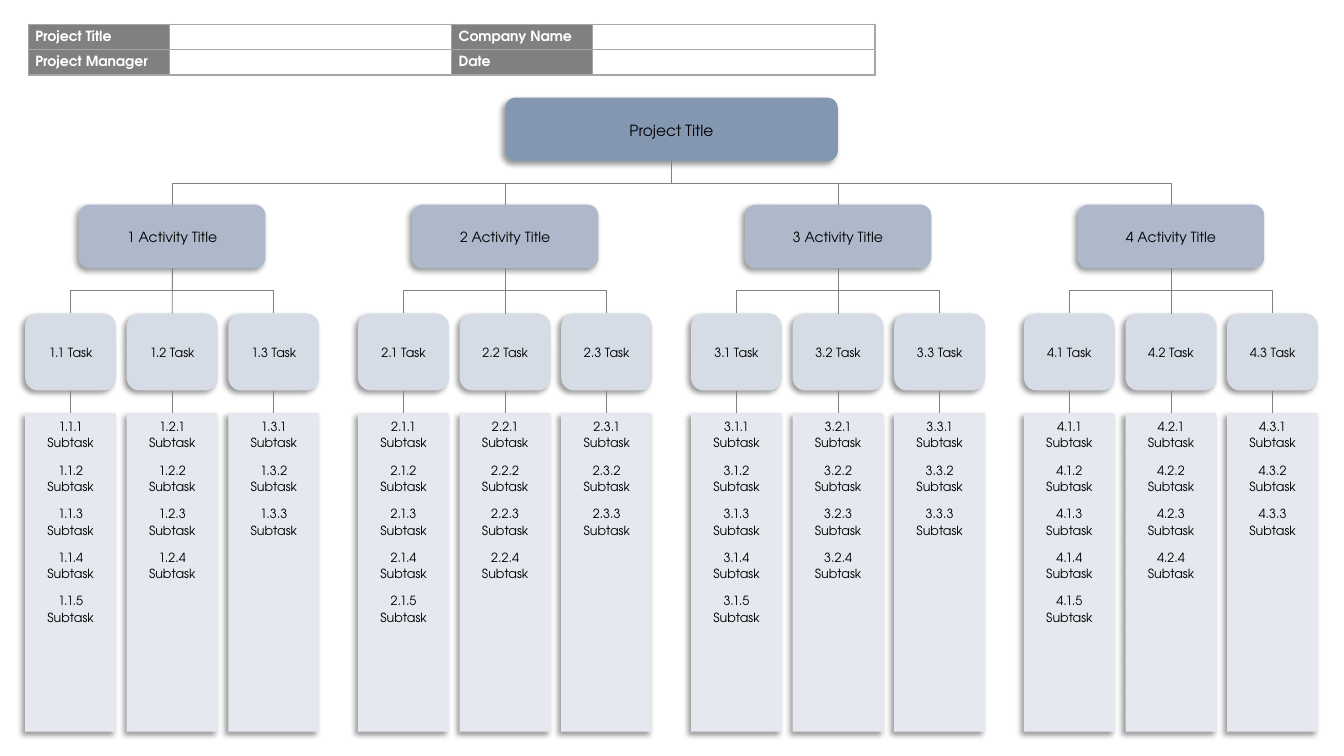
import pptx
import pptx.util
import pptx.dml.color
import pptx.enum.shapes
import pptx.enum.text
import pptx.oxml.ns
import lxml.etree

Cm = pptx.util.Cm
Pt = pptx.util.Pt
RGB = pptx.dml.color.RGBColor
SHAPE = pptx.enum.shapes.MSO_SHAPE
LINK = pptx.enum.shapes.MSO_CONNECTOR
ANCHOR = pptx.enum.text.MSO_ANCHOR
ALIGN = pptx.enum.text.PP_ALIGN
qn = pptx.oxml.ns.qn

HEADER = [
    ["Project Title", "", "Company Name", ""],
    ["Project Manager", "", "Date", ""],
]
ROOT = "Project Title"
ACTIVITIES = ["1 Activity Title", "2 Activity Title", "3 Activity Title", "4 Activity Title"]
SUBTASK_COUNTS = [5, 4, 3]

FONT = "TeX Gyre Adventor"
BLACK = RGB(0x00, 0x00, 0x00)
WHITE = RGB(0xFF, 0xFF, 0xFF)
GREY = RGB(0x80, 0x80, 0x80)
BORDER = RGB(0xA6, 0xA6, 0xA6)
ROOT_FILL = RGB(0x84, 0x97, 0xB0)
ACTIVITY_FILL = RGB(0xAD, 0xB9, 0xCA)
TASK_FILL = RGB(0xD6, 0xDC, 0xE5)
SUBTASK_FILL = RGB(0xE5, 0xE9, 0xEF)

COLUMN_WIDTHS = [3.56, 7.11, 3.56, 7.11]
ROW_HEIGHT = 0.64
FIRST_CENTRE = 4.34
ACTIVITY_PITCH = 8.39
TASK_PITCH = 2.56
ROOT_BOX = (2.46, 8.38, 1.6)
ACTIVITY_BOX = (5.16, 4.7, 1.6)
TASK_BOX = (7.9, 2.29, 1.94)
SUBTASK_BOX = (10.41, 2.29, 8.03)


def add_xml(parent, tag, **attrs):
    return lxml.etree.SubElement(parent, qn(tag), attrs)


def format_text(tf, size, color, bold=False, align=None):
    for p in tf.paragraphs:
        p.alignment = align
        p.line_spacing = 1.07
        p.space_after = Pt(8)
        for r in p.runs:
            r.font.name = FONT
            r.font.size = Pt(size)
            r.font.bold = bold
            r.font.color.rgb = color


def add_shadow(sp):
    sp.shadow.inherit = False
    effects = sp._element.spPr.find(qn("a:effectLst"))
    outer = add_xml(effects, "a:outerShdw", blurRad=str(Pt(4)), dist=str(Pt(3)),
                    dir="8100000", algn="tr", rotWithShape="0")
    color = add_xml(outer, "a:srgbClr", val=str(BLACK))
    add_xml(color, "a:alpha", val="40000")


def add_box(s, kind, centre, box, lines, size, fill, anchor=ANCHOR.MIDDLE):
    top, width, height = box
    sp = s.shapes.add_shape(kind, Cm(centre - width / 2), Cm(top), Cm(width), Cm(height))
    sp.fill.solid()
    sp.fill.fore_color.rgb = fill
    sp.line.fill.background()
    add_shadow(sp)
    tf = sp.text_frame
    tf.word_wrap = True
    tf.vertical_anchor = anchor
    tf.text = "\n".join(lines)
    format_text(tf, size, BLACK, align=ALIGN.CENTER)
    return sp


def link(s, parent, child):
    x1, y1 = parent.left + parent.width // 2, parent.top + parent.height
    x2, y2 = child.left + child.width // 2, child.top
    dx, dy = x2 - x1, y2 - y1
    bent = abs(dx) > Cm(0.1)
    c = s.shapes.add_connector(LINK.ELBOW if bent else LINK.STRAIGHT, x1, y1, x2, y2)
    c.begin_connect(parent, 2)
    c.end_connect(child, 0)
    if bent:
        c.width, c.height = dy, abs(dx)
        c.left = (x1 + x2 - dy) // 2
        c.top = (y1 + y2 - abs(dx)) // 2
        xfrm = c._element.spPr.find(qn("a:xfrm"))
        xfrm.set("rot", "5400000" if dx < 0 else "16200000")
        xfrm.set("flipH", "0" if dx < 0 else "1")
    c.line.color.rgb = GREY
    c.line.width = Pt(0.5)
    add_xml(c._element.spPr, "a:effectLst")


def format_cell(cell, text):
    cell.margin_left = cell.margin_right = Cm(0.18)
    cell.margin_top = cell.margin_bottom = 0
    cell.vertical_anchor = ANCHOR.MIDDLE
    cell.text = text
    format_text(cell.text_frame, 10, WHITE, bold=True)
    tcPr = cell._tc.get_or_add_tcPr()
    for side in ("a:lnL", "a:lnR", "a:lnT", "a:lnB"):
        ln = add_xml(tcPr, side, w=str(Pt(1)))
        add_xml(add_xml(ln, "a:solidFill"), "a:srgbClr", val=str(BORDER))
    if text:
        cell.fill.solid()
        cell.fill.fore_color.rgb = GREY
    else:
        cell.fill.background()
        add_xml(cell.text_frame.paragraphs[0]._p, "a:endParaRPr", sz="1000")


def add_header(s):
    table = s.shapes.add_table(len(HEADER), len(COLUMN_WIDTHS), Cm(0.71), Cm(0.61),
                               Cm(sum(COLUMN_WIDTHS)), Cm(ROW_HEIGHT * len(HEADER))).table
    table.first_row = table.horz_banding = False
    for column, width in zip(table.columns, COLUMN_WIDTHS):
        column.width = Cm(width)
    for i, row in enumerate(HEADER):
        table.rows[i].height = Cm(ROW_HEIGHT)
        for j, text in enumerate(row):
            format_cell(table.cell(i, j), text)


def add_activity(s, root, number, title):
    centre = FIRST_CENTRE + (number - 1) * ACTIVITY_PITCH
    activity = add_box(s, SHAPE.ROUNDED_RECTANGLE, centre, ACTIVITY_BOX, [title], 10, ACTIVITY_FILL)
    link(s, root, activity)
    for i, count in enumerate(SUBTASK_COUNTS):
        x = centre + (i - 1) * TASK_PITCH
        code = f"{number}.{i + 1}"
        subtasks = [f"{code}.{k + 1} Subtask" for k in range(count)]
        task = add_box(s, SHAPE.ROUNDED_RECTANGLE, x, TASK_BOX, [f"{code} Task"], 9, TASK_FILL)
        panel = add_box(s, SHAPE.RECTANGLE, x, SUBTASK_BOX, subtasks, 9, SUBTASK_FILL, ANCHOR.TOP)
        link(s, activity, task)
        link(s, task, panel)


def main():
    prs = pptx.Presentation()
    prs.slide_width, prs.slide_height = Cm(33.87), Cm(19.05)
    s = prs.slides.add_slide(prs.slide_layouts[6])
    add_header(s)
    root_centre = FIRST_CENTRE + (len(ACTIVITIES) - 1) / 2 * ACTIVITY_PITCH
    root = add_box(s, SHAPE.ROUNDED_RECTANGLE, root_centre, ROOT_BOX, [ROOT], 11, ROOT_FILL)
    for number, title in enumerate(ACTIVITIES, 1):
        add_activity(s, root, number, title)
    prs.save("out.pptx")


if __name__ == "__main__":
    main()
